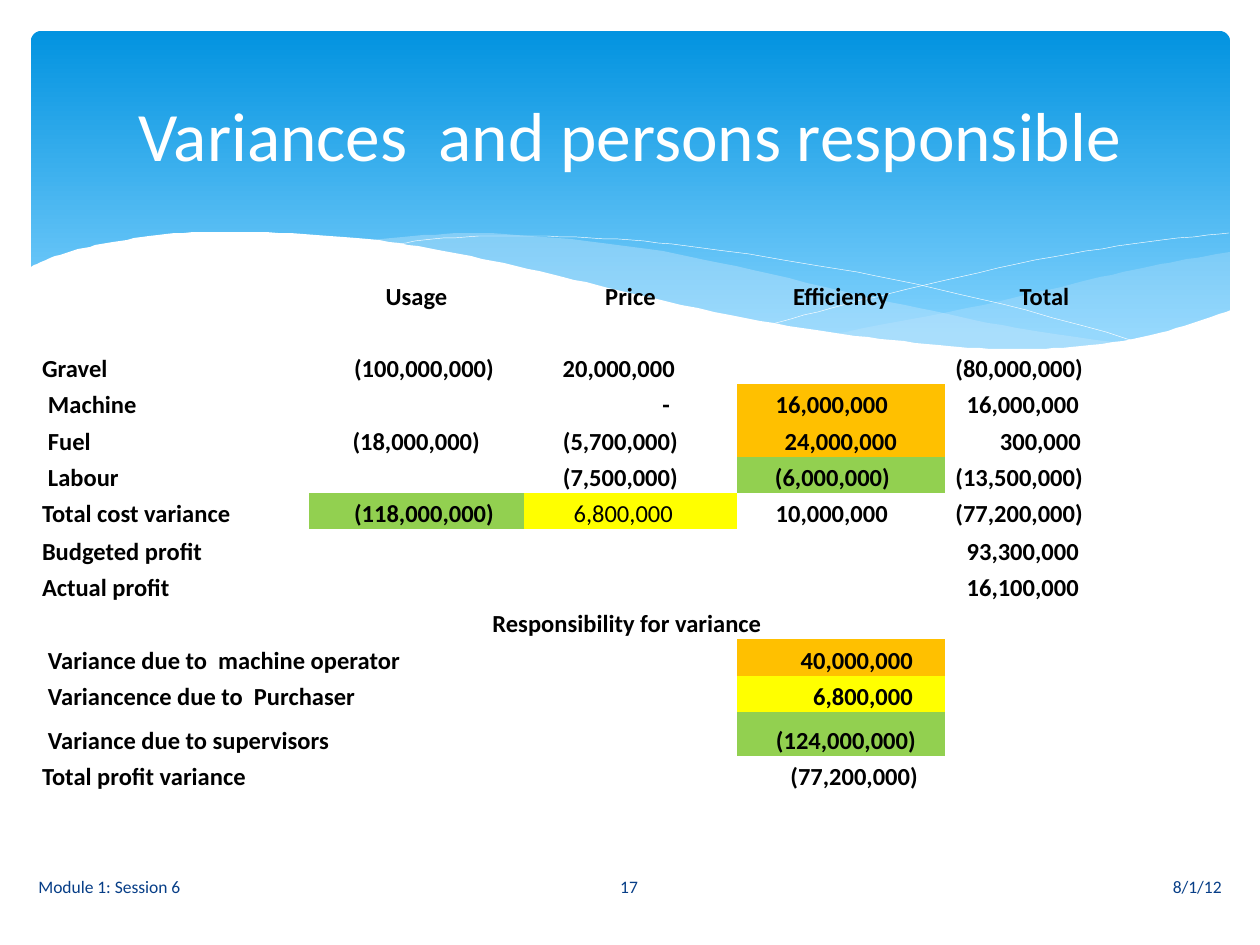
from lxml.etree import SubElement
from pptx import Presentation
from pptx.dml.color import RGBColor
from pptx.enum.shapes import MSO_SHAPE
from pptx.enum.text import MSO_ANCHOR, PP_ALIGN
from pptx.oxml.ns import qn
from pptx.util import Emu, Pt

SCALE = 914400 / 126  # EMU per px

WHITE = RGBColor(0xFF, 0xFF, 0xFF)
BLACK = RGBColor(0, 0, 0)
NAVY = RGBColor(0x07, 0x3E, 0x87)
SKY_TOP = RGBColor(0x02, 0x93, 0xE0)
SKY_BOTTOM = RGBColor(0x83, 0xD3, 0xFE)
PALE = RGBColor(0xC6, 0xE7, 0xFC)
ORANGE = RGBColor(0xFF, 0xC0, 0x00)
GREEN = RGBColor(0x92, 0xD0, 0x50)
YELLOW = RGBColor(0xFF, 0xFF, 0x00)

LEFT, CENTER, RIGHT = PP_ALIGN.LEFT, PP_ALIGN.CENTER, PP_ALIGN.RIGHT

TITLE_FONT = {"name": "Calibri", "size": Pt(39.6), "bold": False}
FOOTER_FONT = {"name": "Calibri", "size": Pt(10)}
BOLD_FONT = {"name": "Calibri", "size": Pt(14), "bold": True}
PLAIN_FONT = {**BOLD_FONT, "bold": False}

# Wave outlines: key points in px, smoothed when drawn
BACK_WAVE = [
    [(1230, 252), (1178, 261), (1123, 272), (1048, 290), (949, 312), (833, 334)],
    [(833, 334), (888, 341), (954, 348), (1026, 350), (1087, 347), (1140, 339),
     (1187, 326), (1230, 311)]]
MIDDLE_WAVE = [
    [(360, 241), (413, 236), (479, 233), (557, 238), (648, 249), (736, 266),
     (842, 291), (934, 311), (1017, 328), (1125, 344)],
    [(1125, 344), (1056, 350), (974, 349), (893, 343), (799, 329), (713, 312),
     (619, 292), (509, 266), (431, 251), (360, 241)]]
FALLING_LINE = [[(389, 246), (433, 239), (505, 236), (591, 238), (672, 244),
                 (766, 257), (876, 276), (1002, 304), (1143, 343)]]
RISING_LINE = [[(772, 324), (847, 304), (942, 281), (1053, 257), (1147, 242),
                (1229, 233)]]
FRONT_WAVE = [
    [(1231, 310), (1184, 326), (1133, 339), (1071, 347), (1019, 349), (959, 347),
     (892, 340), (816, 330), (730, 315), (634, 294), (563, 277), (493, 261),
     (428, 248), (368, 239), (290, 233), (223, 232), (166, 234), (120, 241),
     (84, 248), (50, 258), (29, 268)],
    [(29, 415), (1231, 415)]]

# Table content
COL_WIDTHS = [267, 215, 213, 208, 199]
ROW_HEIGHTS = [36, 36, 36, 36, 37, 36, 36, 38, 36, 36, 37, 36, 44, 36, 37]
HEADERS = ["Usage", "Price", "Efficiency", "Total"]
MERGES = [(9, 1, 3), (10, 0, 2), (11, 0, 1), (12, 0, 1)]  # row, first, last column
LABELS = {  # row: (text, left indent)
    2: ("Gravel", 0), 3: ("Machine", 6), 4: ("Fuel", 6), 5: ("Labour", 6),
    6: ("Total cost variance", 0), 7: ("Budgeted profit", 0),
    8: ("Actual profit", 0), 10: ("Variance due to  machine operator", 6),
    11: ("Variancence due to  Purchaser", 6),
    12: ("Variance due to supervisors", 6), 13: ("Total profit variance", 0)}
AMOUNTS = [  # row, column, text, right indent, fill
    (2, 1, "(100,000,000)", 30, None), (2, 2, "20,000,000", 62, None),
    (2, 4, "(80,000,000)", 61, None),
    (3, 2, "-", 67, None), (3, 3, "16,000,000", 57, ORANGE),
    (3, 4, "16,000,000", 65, None),
    (4, 1, "(18,000,000)", 44, None), (4, 2, "(5,700,000)", 59, None),
    (4, 3, "24,000,000", 48, ORANGE), (4, 4, "300,000", 63, None),
    (5, 2, "(7,500,000)", 59, None), (5, 3, "(6,000,000)", 55, GREEN),
    (5, 4, "(13,500,000)", 61, None),
    (6, 1, "(118,000,000)", 30, GREEN), (6, 2, "6,800,000", 64, YELLOW),
    (6, 3, "10,000,000", 57, None), (6, 4, "(77,200,000)", 61, None),
    (7, 4, "93,300,000", 65, None), (8, 4, "16,100,000", 65, None),
    (10, 3, "40,000,000", 32, ORANGE), (11, 3, "6,800,000", 32, YELLOW),
    (12, 3, "(124,000,000)", 29, GREEN), (13, 3, "(77,200,000)", 27, None)]


def px(n):
    return Emu(round(n * SCALE))


def box(*lengths):
    return [px(n) for n in lengths]


def write(tf, text, font, color, align):
    p = tf.paragraphs[0]
    p.alignment = align
    r = p.add_run()
    r.text = text
    for name, value in font.items():
        setattr(r.font, name, value)
    r.font.color.rgb = color


def smooth(points, steps=6):
    """Return points along a Catmull-Rom curve through the key points."""
    if len(points) < 3:
        return points
    ends = [points[0], *points, points[-1]]
    curve = [points[0]]
    for a, b, c, d in zip(ends, ends[1:], ends[2:], ends[3:]):
        for t in (i / steps for i in range(1, steps + 1)):
            curve.append(tuple(
                (2 * q + (s - o) * t + (2 * o - 5 * q + 4 * s - u) * t ** 2
                 + (3 * q - o - 3 * s + u) * t ** 3) / 2
                for o, q, s, u in zip(a, b, c, d)))
    return curve


def add_wave(s, edges, fill=None, alpha=None):
    """Draw a filled wave, or a thin white line when there is no fill."""
    points = [pt for edge in edges for pt in smooth(edge)]
    builder = s.shapes.build_freeform(*points[0], scale=SCALE)
    builder.add_line_segments(points[1:], close=fill is not None)
    sp = builder.convert_to_shape()
    sp.shadow.inherit = False
    if fill is None:
        sp.fill.background()
        sp.line.color.rgb = WHITE
        sp.line.width = Pt(0.25)
        return
    sp.fill.solid()
    sp.fill.fore_color.rgb = fill
    sp.line.fill.background()
    if alpha:
        clr = sp._element.spPr.find(qn("a:solidFill")).find(qn("a:srgbClr"))
        SubElement(clr, qn("a:alpha")).set("val", str(alpha * 1000))


def add_banner(s):
    sp = s.shapes.add_shape(MSO_SHAPE.ROUNDED_RECTANGLE, *box(31, 31, 1199, 340))
    sp.adjustments[0] = 0.03
    sp.shadow.inherit = False
    sp.line.fill.background()
    sp.fill.gradient()
    sp.fill.gradient_angle = 270
    stops = zip(sp.fill.gradient_stops, [0, 0.9], [SKY_TOP, SKY_BOTTOM])
    for stop, position, color in stops:
        stop.position = position
        stop.color.rgb = color


def set_title(s, text):
    sp = s.shapes.title
    sp.left, sp.top, sp.width, sp.height = box(63, 47, 1134, 173)
    sp.text_frame.vertical_anchor = MSO_ANCHOR.MIDDLE
    write(sp.text_frame, text, TITLE_FONT, WHITE, CENTER)
    s.shapes._spTree.append(sp._element)  # bring in front of the banner


def add_footer(s, text, left, width, align):
    tf = s.shapes.add_textbox(*box(left, 862, width, 50)).text_frame
    tf.word_wrap = True
    tf.vertical_anchor = MSO_ANCHOR.MIDDLE
    write(tf, text, FOOTER_FONT, NAVY, align)


def add_grid(s):
    frame = s.shapes.add_table(len(ROW_HEIGHTS), len(COL_WIDTHS),
                               *box(42, 276, sum(COL_WIDTHS), sum(ROW_HEIGHTS)))
    table = frame.table
    table.first_row = table.horz_banding = False
    style = table._tbl.tblPr.find(qn("a:tableStyleId"))
    style.text = "{2D5ABB26-0587-4C30-8999-92F81FD0307C}"  # no style, no grid
    for col, width in zip(table.columns, COL_WIDTHS):
        col.width = px(width)
    for row, height in zip(table.rows, ROW_HEIGHTS):
        row.height = px(height)
    for cell in table.iter_cells():
        cell.margin_left = cell.margin_right = 0
        cell.margin_top = cell.margin_bottom = 0
        cell.vertical_anchor = MSO_ANCHOR.BOTTOM
        cell.fill.background()
        # Keeps empty cells from stretching their row
        SubElement(cell.text_frame.paragraphs[0]._p, qn("a:endParaRPr")).set("sz", "1400")
    for row, first, last in MERGES:
        table.cell(row, first).merge(table.cell(row, last))
    return table


def fill_table(table):
    for col, text in enumerate(HEADERS, 1):
        write(table.cell(0, col).text_frame, text, BOLD_FONT, BLACK, CENTER)
    write(table.cell(9, 1).text_frame, "Responsibility for variance",
          BOLD_FONT, BLACK, CENTER)
    for row, (text, indent) in LABELS.items():
        cell = table.cell(row, 0)
        cell.margin_left = px(indent)
        write(cell.text_frame, text, BOLD_FONT, BLACK, LEFT)
    for row, col, text, indent, fill in AMOUNTS:
        cell = table.cell(row, col)
        cell.margin_right = px(indent)
        font = PLAIN_FONT if (row, col) == (6, 2) else BOLD_FONT
        write(cell.text_frame, text, font, BLACK, RIGHT)
        if fill:
            cell.fill.solid()
            cell.fill.fore_color.rgb = fill


def main():
    prs = Presentation()
    prs.slide_width, prs.slide_height = box(1260, 945)
    s = prs.slides.add_slide(prs.slide_layouts[5])

    # Banner with waves
    add_banner(s)
    add_wave(s, BACK_WAVE, PALE, 29)
    add_wave(s, MIDDLE_WAVE, PALE, 40)
    add_wave(s, FALLING_LINE)
    add_wave(s, RISING_LINE)
    add_wave(s, FRONT_WAVE, WHITE)

    # Title and footer
    set_title(s, "Variances  and persons responsible")
    add_footer(s, "8/1/12", 712, 522, RIGHT)
    add_footer(s, "Module 1: Session 6", 26, 522, LEFT)
    add_footer(s, "17", 549, 160, CENTER)

    # Variance table
    fill_table(add_grid(s))
    prs.save("out.pptx")


if __name__ == "__main__":
    main()
